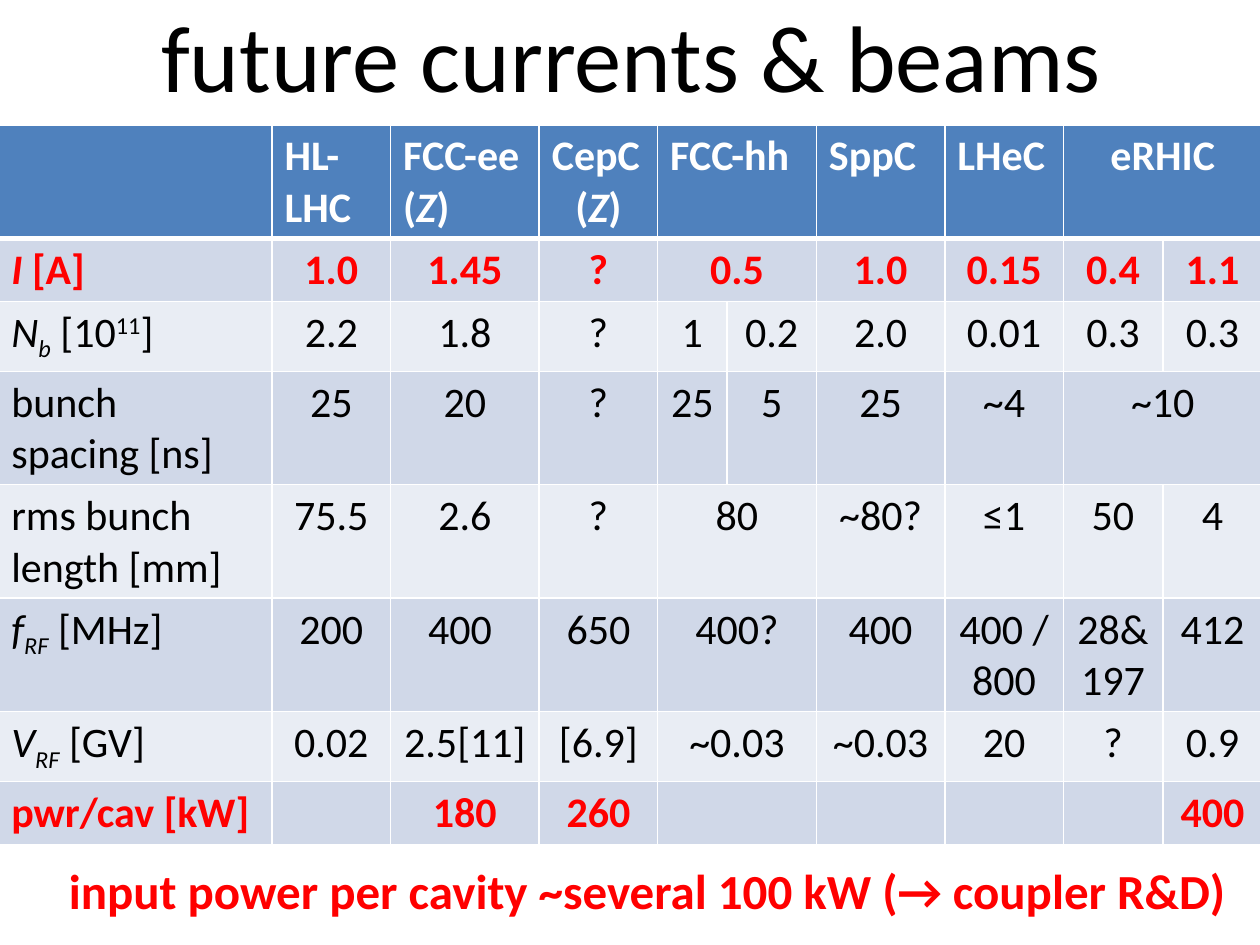
from dataclasses import dataclass

from lxml import etree
from pptx import Presentation
from pptx.dml.color import RGBColor
from pptx.enum import text
from pptx.oxml import ns
from pptx.util import Inches, Pt

LEFT, CENTER = text.PP_ALIGN.LEFT, text.PP_ALIGN.CENTER


@dataclass(frozen=True)
class Theme:
    """Colours and type sizes of the slide."""
    font: str = "Calibri"
    ink: str = "000000"
    accent: str = "FF0000"
    white: str = "FFFFFF"
    header: str = "4F81BD"
    bands: tuple = ("E9EDF4", "D0D8E8")
    title_size: int = 54
    message_size: int = 28
    table_size: int = 24


THEME = Theme()
BASELINES = {"sub": "-25000", "sup": "30000"}
COLUMN_WIDTHS = [2.17, 0.94, 1.18, 0.94, 0.55, 0.71, 1.02, 0.94, 0.79, 0.79]
ROW_HEIGHT = 0.41
EMPHASIZED_ROWS = (1, 7)

# A cell is a list of paragraphs, a paragraph a list of (words, styles...);
# plain strings stand for either, and None joins the cell to its left.
Z_MODE = [("(",), ("Z", "i"), (")",)]
PARAMETERS = [
    ["", "HL-LHC", [[("FCC-ee (",), ("Z", "i"), (")",)]], ["CepC", Z_MODE],
     "FCC-hh", None, "SppC", "LHeC", "eRHIC", None],
    [[[("I", "i"), (" [A]",)]],
     "1.0", "1.45", "?", "0.5", None, "1.0", "0.15", "0.4", "1.1"],
    [[[("N", "i"), ("b", "i", "sub"), (" [10",), ("11", "sup"), ("]",)]],
     "2.2", "1.8", "?", "1", "0.2", "2.0", "0.01", "0.3", "0.3"],
    [["bunch", "spacing [ns]"],
     "25", "20", "?", "25 ", "5", "25", "~4", "~10", None],
    ["rms bunch length [mm]",
     "75.5", "2.6", "?", "80", None, "~80?", "≤1", "50", "4"],
    [[[("f", "i"), ("RF", "i", "sub"), (" [MHz]",)]],
     "200", "400 ", "650", "400?", None, "400", "400 /800", "28& 197", "412"],
    [[[("V", "i"), ("RF", "i", "sub"), (" [GV]",)]],
     "0.02", "2.5[11]", "[6.9]", "~0.03", None, "~0.03", "20", "?", "0.9"],
    ["pwr/cav [kW]", "", "180", "260", "", None, "", "", "", "400"],
]
HEADER_ALIGNS = {3: [LEFT, CENTER], 8: [CENTER]}


def write(frame, content, size, color=THEME.ink, bold=False, aligns=(CENTER,)):
    """Fill a text frame; the last alignment serves any further paragraphs."""
    lines = [content] if isinstance(content, str) else content
    for index, line in enumerate(lines):
        paragraph = frame.paragraphs[0] if index == 0 else frame.add_paragraph()
        paragraph.alignment = aligns[min(index, len(aligns) - 1)]
        for words, *styles in [(line,)] if isinstance(line, str) else line:
            if not words:
                continue
            run = paragraph.add_run()
            run.text = words
            run.font.name = THEME.font
            run.font.size = Pt(size)
            run.font.bold = bold
            run.font.italic = "i" in styles
            run.font.color.rgb = RGBColor.from_string(color)
            for style in BASELINES.keys() & set(styles):
                run.font._element.set("baseline", BASELINES[style])


def add_caption(slide, words, left, top, width, height, **style):
    """Add a wrapped, vertically centred line of text."""
    caption = slide.shapes.add_textbox(
        Inches(left), Inches(top), Inches(width), Inches(height))
    frame = caption.text_frame
    frame.word_wrap = True
    frame.vertical_anchor = text.MSO_ANCHOR.MIDDLE
    write(frame, words, **style)


def paint_cell(cell, color, top, bottom):
    """Give a cell its white borders and its fill."""
    properties = cell._tc.get_or_add_tcPr()
    for side, points in (("L", 1), ("R", 1), ("T", top), ("B", bottom)):
        border = etree.SubElement(
            properties, ns.qn(f"a:ln{side}"), w=str(Pt(points)))
        solid = etree.SubElement(border, ns.qn("a:solidFill"))
        etree.SubElement(solid, ns.qn("a:srgbClr"), val=THEME.white)
    cell.fill.solid()
    cell.fill.fore_color.rgb = RGBColor.from_string(color)


def cell_style(row, column):
    """Return the text format that a table position calls for."""
    if row == 0:
        return dict(color=THEME.white, bold=True,
                    aligns=HEADER_ALIGNS.get(column, [LEFT]))
    emphasized = row in EMPHASIZED_ROWS
    return dict(color=THEME.accent if emphasized else THEME.ink,
                bold=emphasized, aligns=[CENTER if column else LEFT])


def add_parameter_table(slide):
    """Add the table of beam parameters for each collider."""
    holder = slide.shapes.add_table(
        len(PARAMETERS), len(COLUMN_WIDTHS),
        Inches(-0.01), Inches(0.99), Inches(10.04), Inches(5.6))
    table = holder.table
    for column, width in zip(table.columns, COLUMN_WIDTHS):
        column.width = Inches(width)
    for row in table.rows:
        row.height = Inches(ROW_HEIGHT)
    holder.height = Inches(5.6)
    for r, values in enumerate(PARAMETERS):
        for c, value in enumerate(values):
            cell = table.cell(r, c)
            paint_cell(cell, THEME.bands[r % 2] if r else THEME.header,
                       top=3 if r == 1 else 1, bottom=1 if r else 3)
            if value is None:
                table.cell(r, c - 1).merge(cell)
            else:
                write(cell.text_frame, value, THEME.table_size,
                      **cell_style(r, c))


def main():
    """Build and save the slide."""
    deck = Presentation()
    deck.slide_width, deck.slide_height = Inches(10), Inches(7.5)
    slide = deck.slides.add_slide(deck.slide_layouts[6])
    add_caption(slide, "future currents & beams", 0.51, -0.19, 9, 1.25,
                size=THEME.title_size)
    add_parameter_table(slide)
    add_caption(slide, " input power per cavity ~several 100 kW (→ coupler R&D)",
                0.03, 6.78, 10.12, 0.57,
                size=THEME.message_size, color=THEME.accent, bold=True)
    deck.save("out.pptx")


if __name__ == "__main__":
    main()
